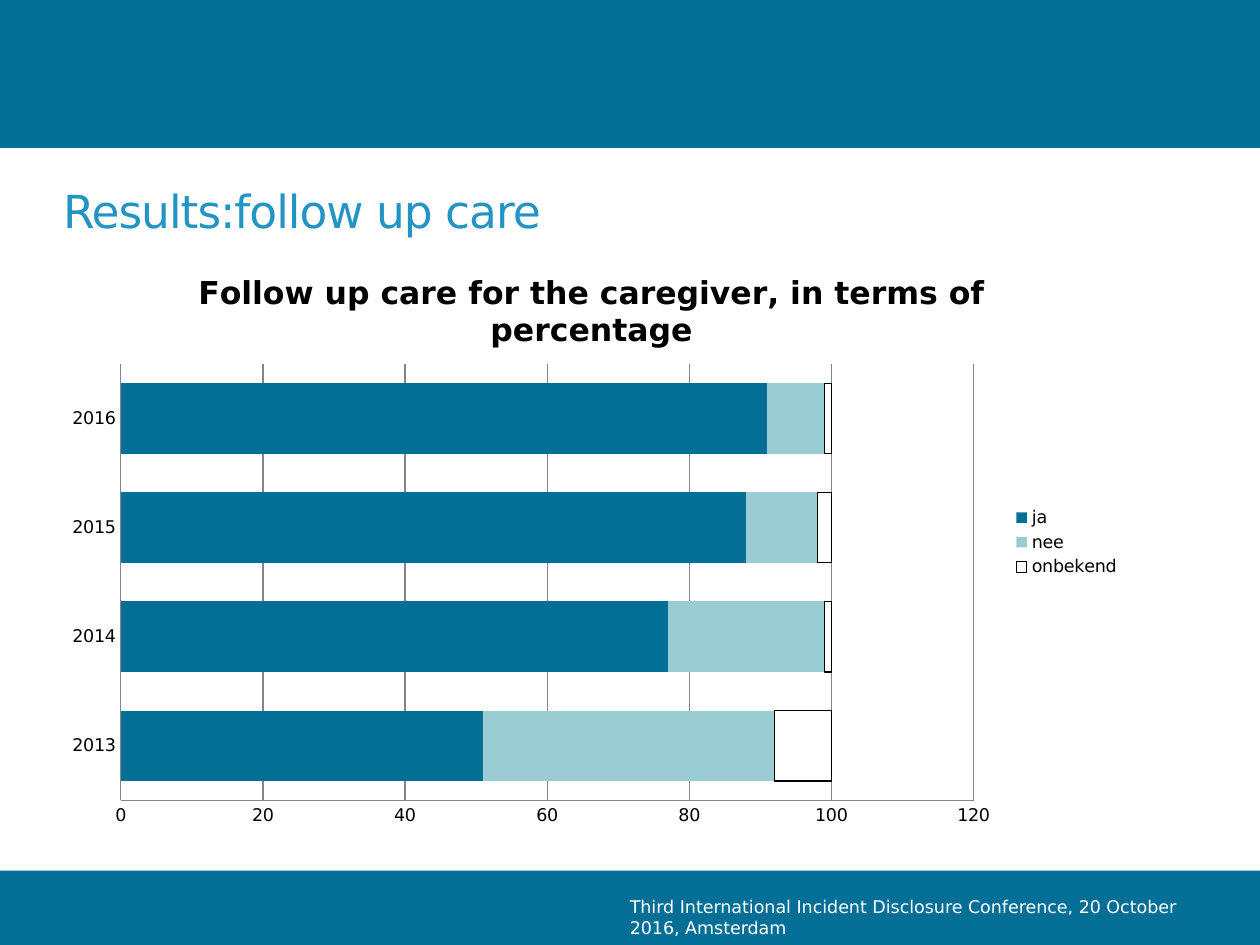
from lxml.etree import fromstring
from pptx import Presentation
from pptx.chart.data import CategoryChartData
from pptx.dml.color import RGBColor
from pptx.enum.chart import XL_CHART_TYPE, XL_LEGEND_POSITION, XL_TICK_MARK
from pptx.enum.shapes import MSO_SHAPE
from pptx.enum.text import MSO_ANCHOR, PP_ALIGN
from pptx.oxml.ns import nsdecls
from pptx.util import Pt

# Content
TITLE = "Results:follow up care"
FOOTER = "Third International Incident Disclosure Conference, 20 October 2016, Amsterdam"
CHART_TITLE = "Follow up care for the caregiver, in terms of percentage"
YEARS = ["2013", "2014", "2015", "2016"]
SERIES = [
    ("ja", [51, 77, 88, 91], "teal"),
    ("nee", [41, 22, 10, 8], "pale"),
    ("onbekend", [8, 1, 2, 1], "white"),
]
THEME = {
    "font": "DejaVu Sans",
    "teal": RGBColor.from_string("046F96"),
    "pale": RGBColor.from_string("9ACCD4"),
    "title": RGBColor.from_string("2494C5"),
    "white": RGBColor.from_string("FFFFFF"),
    "black": RGBColor.from_string("000000"),
    "grid": RGBColor.from_string("868686"),
    "title_size": Pt(26), "chart_title_size": Pt(18), "small_size": Pt(10),
}

# Positions in points: left, top, width, height
SLIDE_W, SLIDE_H = 720, 540
HEADER_H, FOOTER_H = 84.5, 42.5
BANDS = [(0, SLIDE_H - FOOTER_H, SLIDE_W, FOOTER_H), (0, 0, SLIDE_W, HEADER_H)]
TITLE_BOX = (28.8, 97.2, 617.8, 45.4)
FOOTER_BOX = (352.8, 508.3, 327.6, 25.2)
CHART_BOX = (28.8, 141.8, 618.5, 336.2)
PLOT = {"x": 0.065, "y": 0.197, "w": 0.788, "h": 0.742}  # shares of the chart


def pts(box):
    return [Pt(v) for v in box]


def set_font(font, size, color, bold=False):
    font.name, font.size, font.bold = THEME["font"], THEME[size], bold
    font.color.rgb = THEME[color]


prs = Presentation()
prs.slide_width, prs.slide_height = Pt(SLIDE_W), Pt(SLIDE_H)
s = prs.slides.add_slide(prs.slide_layouts[5])

# Header and footer bands
for box in BANDS:
    sp = s.shapes.add_shape(MSO_SHAPE.RECTANGLE, *pts(box))
    sp.shadow.inherit = False
    sp.fill.solid()
    sp.fill.fore_color.rgb = THEME["teal"]
    sp.line.fill.background()

# Title
title = s.shapes.title
title.left, title.top, title.width, title.height = pts(TITLE_BOX)
tf = title.text_frame
tf.text = TITLE
tf.vertical_anchor = MSO_ANCHOR.MIDDLE
p = tf.paragraphs[0]
p.alignment = PP_ALIGN.LEFT
set_font(p.font, "title_size", "title")
p.runs[0]._r.get_or_add_rPr().set("spc", "-60")

# Footer text
tf = s.shapes.add_textbox(*pts(FOOTER_BOX)).text_frame
tf.word_wrap = True
tf.text = FOOTER
set_font(tf.paragraphs[0].font, "small_size", "white")

# Chart
data = CategoryChartData()
data.categories = YEARS
for name, values, _ in SERIES:
    data.add_series(name, values)
chart = s.shapes.add_chart(XL_CHART_TYPE.BAR_STACKED, *pts(CHART_BOX), data).chart
set_font(chart.font, "small_size", "black")
chart.has_title = True
tf = chart.chart_title.text_frame
tf.text = CHART_TITLE
set_font(tf.paragraphs[0].font, "chart_title_size", "black", bold=True)
chart.chart_title.include_in_layout = False
chart.has_legend = True
chart.legend.position = XL_LEGEND_POSITION.RIGHT
chart.legend.include_in_layout = False

# Bars
plot = chart.plots[0]
plot.gap_width, plot.overlap = 55, 100
plot.vary_by_categories = False
for series, (_, _, color) in zip(plot.series, SERIES):
    series.format.fill.solid()
    series.format.fill.fore_color.rgb = THEME[color]
    if color == "white":
        series.format.line.color.rgb = THEME["black"]
        series.format.line.width = Pt(0.75)

# Axes
value_axis = chart.value_axis
value_axis.minimum_scale, value_axis.maximum_scale = 0, 120
value_axis.major_unit = 20
value_axis.has_major_gridlines = True
value_axis.major_gridlines.format.line.color.rgb = THEME["grid"]
for axis in (chart.category_axis, value_axis):
    axis.major_tick_mark = axis.minor_tick_mark = XL_TICK_MARK.NONE
    axis.format.line.color.rgb = THEME["grid"]

# Fixed plot area
plot_area = chart._chartSpace.chart.plotArea
for old in plot_area.xpath("c:layout"):
    plot_area.remove(old)
modes = '<c:layoutTarget val="inner"/><c:xMode val="edge"/><c:yMode val="edge"/>'
sizes = "".join(f'<c:{k} val="{v}"/>' for k, v in PLOT.items())
plot_area.insert(0, fromstring(
    f'<c:layout {nsdecls("c")}><c:manualLayout>{modes}{sizes}</c:manualLayout></c:layout>'))

prs.save("out.pptx")
